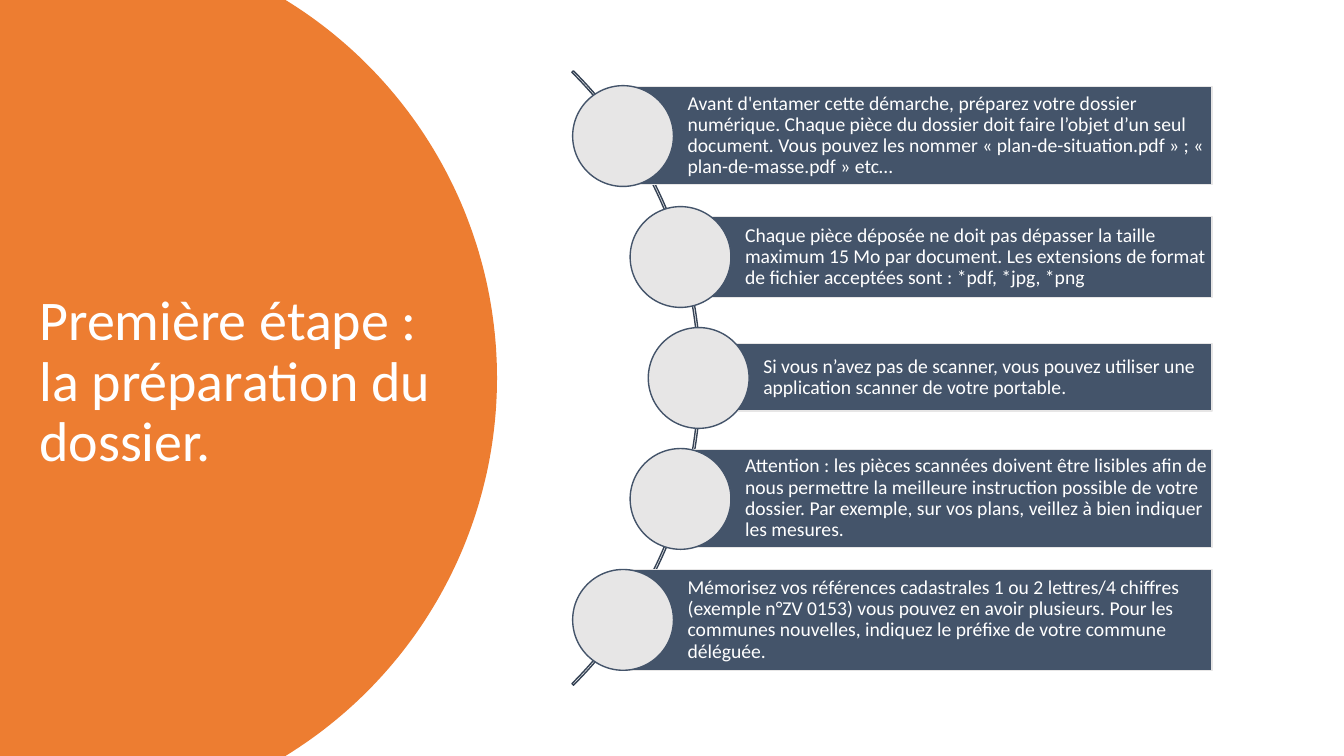
import math
from dataclasses import dataclass

import pptx
import pptx.dml.color
import pptx.enum.shapes
import pptx.enum.text
import pptx.util

SHAPES = pptx.enum.shapes.MSO_SHAPE
TEXT = pptx.enum.text
PX = 9144  # EMU per px, 100 px to the inch
PAGE_WIDTH, PAGE_HEIGHT = 1333, 750


@dataclass(frozen=True)
class Theme:
    font: str = "Calibri"
    title_size: int = 40
    step_size: int = 14
    line_width: int = 1
    accent: str = "ED7D31"
    bar: str = "44546A"
    pale: str = "E7E6E6"
    arc: str = "364355"
    text: str = "FFFFFF"


class Page:
    def __init__(self, slide, theme):
        self.slide = slide
        self.shapes = slide.shapes
        self.theme = theme

    def color(self, value):
        return pptx.dml.color.RGBColor.from_string(value)

    def paint(self, shape, fill=None, line=None):
        shape.shadow.inherit = False
        if fill:
            shape.fill.solid()
            shape.fill.fore_color.rgb = self.color(fill)
        else:
            shape.fill.background()
        if line:
            shape.line.color.rgb = self.color(line)
            shape.line.width = pptx.util.Pt(self.theme.line_width)
        else:
            shape.line.fill.background()

    def shape(self, kind, left, top, width, height, fill=None, line=None):
        box = self.shapes.add_shape(kind, left * PX, top * PX, width * PX, height * PX)
        self.paint(box, fill, line)
        return box

    def set_text(self, frame, lines, size, anchor):
        """Fill a frame with one left-aligned paragraph, broken between lines."""
        frame.word_wrap = True
        frame.auto_size = TEXT.MSO_AUTO_SIZE.NONE
        frame.vertical_anchor = anchor
        para = frame.paragraphs[0]
        para.alignment = TEXT.PP_ALIGN.LEFT
        para.line_spacing = 0.9
        for index, line in enumerate(lines):
            if index:
                para.add_line_break()
            span = para.add_run()
            span.text = line
            span.font.name = self.theme.font
            span.font.size = pptx.util.Pt(size)
            span.font.color.rgb = self.color(self.theme.text)

    def round_panel(self, center_x, radius):
        """Colour the left of the page up to the edge of a large circle."""
        middle = PAGE_HEIGHT / 2
        limit = math.asin(middle / radius)
        steps = 120
        edge = []
        for step in range(steps + 1):
            angle = limit * (2 * step / steps - 1)
            edge.append((round((center_x + radius * math.cos(angle)) * PX),
                         round((middle + radius * math.sin(angle)) * PX)))
        builder = self.shapes.build_freeform(0, 0, scale=1.0)
        builder.add_line_segments(edge + [(0, PAGE_HEIGHT * PX)], close=True)
        self.paint(builder.convert_to_shape(), self.theme.accent)

    def thin_arc(self, left, top, size):
        arc = self.shape(SHAPES.BLOCK_ARC, left, top, size, size, line=self.theme.arc)
        for index, value in enumerate((189, 27, 0.0025)):
            arc.adjustments[index] = value

    def step(self, disc_left, center_y, bar_height, text):
        disc_size, bar_right = 100, 1202
        bar_left = disc_left + disc_size // 2
        bar = self.shape(SHAPES.RECTANGLE, bar_left, center_y - (bar_height + 1) // 2,
                         bar_right - bar_left, bar_height, self.theme.bar, self.theme.pale)
        frame = bar.text_frame
        frame.margin_left = 64 * PX
        frame.margin_top = frame.margin_right = frame.margin_bottom = 4 * PX
        self.set_text(frame, [text], self.theme.step_size, TEXT.MSO_ANCHOR.MIDDLE)
        self.shape(SHAPES.OVAL, disc_left, center_y - disc_size // 2,
                   disc_size, disc_size, self.theme.pale, self.theme.bar)

    def title(self, left, top, width, height, lines):
        """Place the title placeholder in front of everything drawn so far."""
        title = self.shapes.title
        title.left, title.top = left * PX, top * PX
        title.width, title.height = width * PX, height * PX
        self.set_text(title.text_frame, lines, self.theme.title_size, TEXT.MSO_ANCHOR.BOTTOM)
        self.shapes._spTree.append(title._element)


STEPS = [
    (568, 97, "Avant d'entamer cette démarche, préparez votre dossier numérique. "
              "Chaque pièce du dossier doit faire l’objet d’un seul document. "
              "Vous pouvez les nommer « plan-de-situation.pdf » ; "
              "« plan-de-masse.pdf » etc…"),
    (625, 80, "Chaque pièce déposée ne doit pas dépasser la taille maximum 15 Mo "
              "par document. Les extensions de format de fichier acceptées sont : "
              "*pdf, *jpg, *png"),
    (643, 67, "Si vous n’avez pas de scanner, vous pouvez utiliser une application "
              "scanner de votre portable."),
    (625, 97, "Attention : les pièces scannées doivent être lisibles afin de nous "
              "permettre la meilleure instruction possible de votre dossier. "
              "Par exemple, sur vos plans, veillez à bien indiquer les mesures."),
    (568, 100, "Mémorisez vos références cadastrales 1 ou 2 lettres/4 chiffres "
               "(exemple n°ZV 0153) vous pouvez en avoir plusieurs. Pour les communes "
               "nouvelles, indiquez le préfixe de votre commune déléguée."),
]


def main():
    deck = pptx.Presentation()
    deck.slide_width, deck.slide_height = PAGE_WIDTH * PX, PAGE_HEIGHT * PX
    title_only = deck.slide_layouts.get_by_name("Title Only")
    page = Page(deck.slides.add_slide(title_only), Theme())
    page.round_panel(center_x=53, radius=440)
    page.thin_arc(-167, -56, 862)
    for index, (disc_left, bar_height, text) in enumerate(STEPS):
        page.step(disc_left, 135 + 120 * index, bar_height, text)
    page.title(29, 236, 448, 239, ["Première étape :", "la préparation du dossier."])
    deck.save("out.pptx")


if __name__ == "__main__":
    main()
